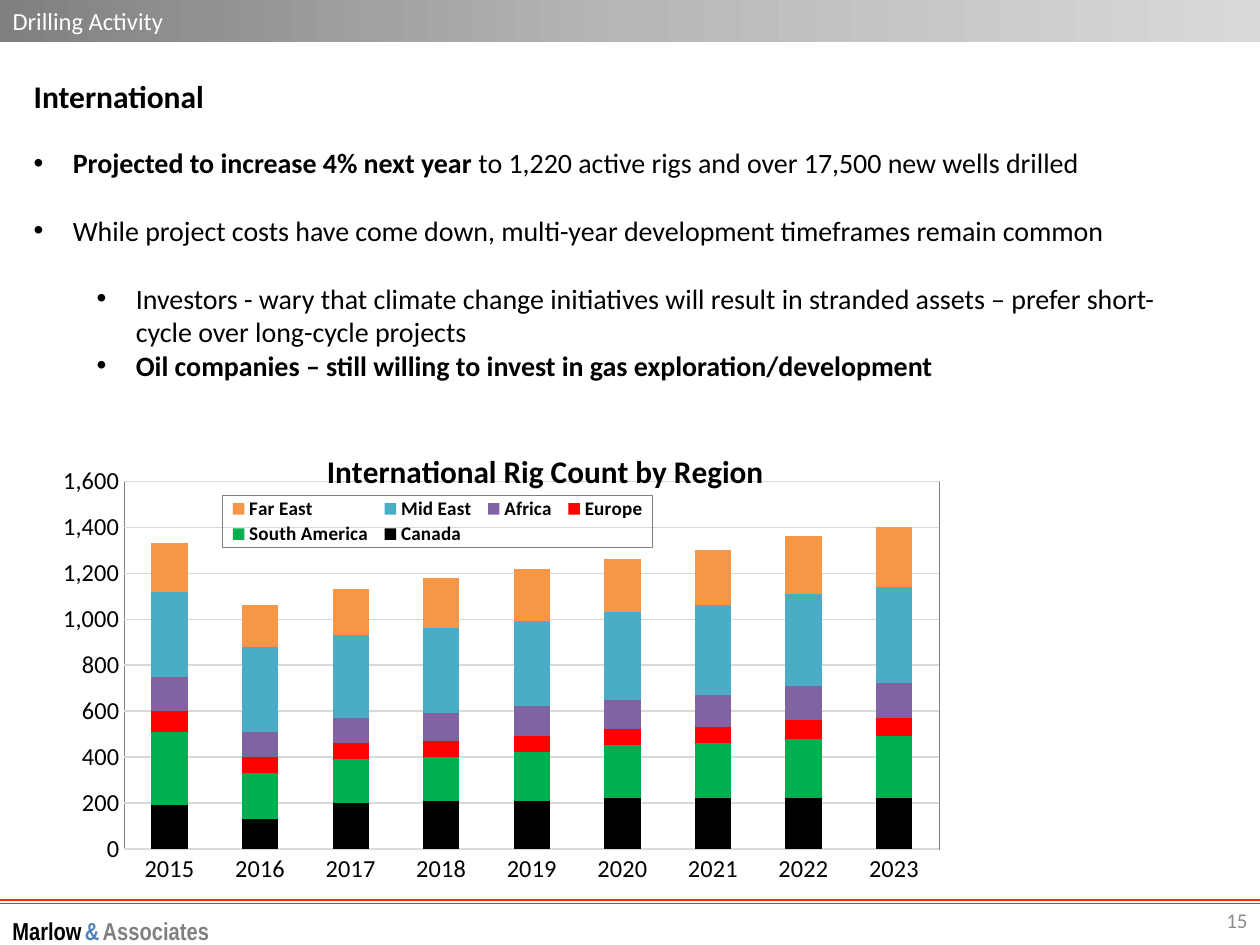
import copy
from dataclasses import dataclass

import pptx
import pptx.chart.data
import pptx.dml.color
import pptx.enum.chart
import pptx.enum.shapes
import pptx.enum.text
import pptx.oxml
import pptx.oxml.ns
import pptx.util

Cm = pptx.util.Cm
Pt = pptx.util.Pt
RGBColor = pptx.dml.color.RGBColor
Anchor = pptx.enum.text.MSO_ANCHOR
Align = pptx.enum.text.PP_ALIGN
qn = pptx.oxml.ns.qn

BLACK = RGBColor(0, 0, 0)
WHITE = RGBColor(255, 255, 255)
GRAY = RGBColor(0x80, 0x80, 0x80)
MID_GRAY = RGBColor(0xB7, 0xB7, 0xB7)
LIGHT_GRAY = RGBColor(0xD9, 0xD9, 0xD9)
NUMBER_GRAY = RGBColor(0x8C, 0x8C, 0x8C)
RULE_RED = RGBColor(0xFF, 0x33, 0x00)
BLUE = RGBColor(0x4F, 0x81, 0xBD)

POINTS = [
    (0, 18, [("Projected to increase 4% next year ", True),
             ("to 1,220 active rigs and over 17,500 new wells drilled", False)]),
    (0, 19.5, [("While project costs have come down, multi-year development "
                "timeframes remain common", False)]),
    (1, 19.5, [("Investors - wary that climate change initiatives will result in "
                "stranded assets – prefer short-cycle over long-cycle projects", False)]),
    (1, 0, [("Oil companies – still willing to invest in gas "
             "exploration/development", True)]),
]
YEARS = [str(year) for year in range(2015, 2024)]
REGIONS = [
    ("Canada", BLACK, [190, 130, 200, 210, 210, 220, 220, 220, 220]),
    ("South America", RGBColor(0x00, 0xB0, 0x50),
     [320, 200, 190, 190, 210, 230, 240, 260, 270]),
    ("Europe", RGBColor(0xFF, 0x00, 0x00), [90, 70, 70, 70, 70, 70, 70, 80, 80]),
    ("Africa", RGBColor(0x80, 0x64, 0xA2),
     [150, 110, 110, 120, 130, 130, 140, 150, 150]),
    ("Mid East", RGBColor(0x4B, 0xAC, 0xC6),
     [370, 370, 360, 370, 370, 380, 390, 400, 420]),
    ("Far East", RGBColor(0xF7, 0x96, 0x46),
     [210, 180, 200, 220, 230, 230, 240, 250, 260]),
]


@dataclass
class Box:
    left: float
    top: float
    width: float
    height: float

    def lengths(self):
        return Cm(self.left), Cm(self.top), Cm(self.width), Cm(self.height)


def style_font(font, size, color=BLACK, bold=False, name="Calibri"):
    font.size = Pt(size)
    font.name = name
    font.bold = bold
    font.color.rgb = color


def add_text_box(page, box, anchor=Anchor.TOP):
    frame = page.shapes.add_textbox(*box.lengths()).text_frame
    frame.word_wrap = True
    frame.vertical_anchor = anchor
    return frame


def build_banner(page, box):
    title = page.shapes.title
    title.left, title.top, title.width, title.height = box.lengths()
    title.fill.gradient()
    title.fill.gradient_angle = 0
    stops = title.fill.gradient_stops
    stops[0].color.rgb, stops[0].position = MID_GRAY, 0.5
    stops[1].color.rgb, stops[1].position = LIGHT_GRAY, 1
    first = title._element.spPr.find(".//" + qn("a:gs"))
    first.addprevious(copy.deepcopy(first))
    start = title.fill.gradient_stops[0]
    start.color.rgb, start.position = GRAY, 0
    frame = title.text_frame
    frame.auto_size = pptx.enum.text.MSO_AUTO_SIZE.NONE
    frame.vertical_anchor = Anchor.MIDDLE
    frame.text = "Drilling Activity"
    para = frame.paragraphs[0]
    para.alignment = Align.LEFT
    style_font(para.font, 14, WHITE)


def add_bullet(para, level):
    para.level = level
    properties = para._p.get_or_add_pPr()
    properties.set("marL", str(Cm(0.79 + 1.27 * level)))
    properties.set("indent", str(Cm(-0.79)))
    properties.append(properties.makeelement(qn("a:buFont"), {"typeface": "Arial"}))
    properties.append(properties.makeelement(qn("a:buChar"), {"char": "•"}))


def build_points(page, box):
    frame = add_text_box(page, box)
    heading = frame.paragraphs[0]
    heading.text = "International"
    style_font(heading.font, 18, bold=True)
    for level, gap, spans in POINTS:
        para = frame.add_paragraph()
        add_bullet(para, level)
        para.space_before = Pt(gap)
        style_font(para.font, 16, bold=spans[0][1])
        for text, bold in spans:
            span = para.add_run()
            span.text = text
            if bold != spans[0][1]:
                span.font.bold = bold


def place_part(part, index, target=None, **fractions):
    for old in part.findall(qn("c:layout")):
        part.remove(old)
    layout = part.makeelement(qn("c:layout"), {})
    manual = layout.makeelement(qn("c:manualLayout"), {})
    layout.append(manual)
    settings = {"layoutTarget": target} if target else {}
    settings.update(xMode="edge", yMode="edge", **fractions)
    for tag, value in settings.items():
        manual.append(manual.makeelement(qn("c:" + tag), {"val": str(value)}))
    part.insert(index, layout)


def outline():
    return pptx.oxml.parse_xml(
        f'<c:spPr {pptx.oxml.ns.nsdecls("c", "a")}><a:ln w="{Pt(0.75)}">'
        f'<a:solidFill><a:srgbClr val="{GRAY}"/></a:solidFill></a:ln></c:spPr>')


def build_chart(page, box):
    data = pptx.chart.data.CategoryChartData(number_format="#,##0")
    data.categories = YEARS
    for name, _, values in REGIONS:
        data.add_series(name, values)
    chart = page.shapes.add_chart(
        pptx.enum.chart.XL_CHART_TYPE.COLUMN_STACKED, *box.lengths(), data).chart
    style_font(chart.font, 10, bold=True)

    chart.has_title = True
    chart.chart_title.text_frame.text = "International Rig Count by Region"
    style_font(chart.chart_title.text_frame.paragraphs[0].font, 18, bold=True)
    place_part(chart.chart_title._element, 1, x=0.28, y=0.03)

    plot = chart.plots[0]
    plot.gap_width, plot.overlap, plot.vary_by_categories = 150, 100, False
    for series, (_, color, _) in zip(plot.series, REGIONS):
        series.format.fill.solid()
        series.format.fill.fore_color.rgb = color
    area = chart._chartSpace.chart.plotArea
    place_part(area, 0, "inner", x=0.06, y=0.11, w=0.91, h=0.78)
    area.append(outline())

    for axis in (chart.category_axis, chart.value_axis):
        axis.major_tick_mark = pptx.enum.chart.XL_TICK_MARK.NONE
        style_font(axis.tick_labels.font, 14)
    values_axis = chart.value_axis
    values_axis.minimum_scale, values_axis.maximum_scale = 0, 1600
    values_axis.major_unit = 200
    values_axis.tick_labels.number_format = "#,##0"
    values_axis.tick_labels.number_format_is_linked = False
    values_axis.format.line.fill.background()
    for part in (chart.category_axis, values_axis.major_gridlines):
        part.format.line.color.rgb = LIGHT_GRAY
        part.format.line.width = Pt(0.75)

    chart.has_legend = True
    legend = chart.legend
    legend.position = pptx.enum.chart.XL_LEGEND_POSITION.RIGHT
    legend.include_in_layout = False
    style_font(legend.font, 11, bold=True)
    place_part(legend._element, 1, x=0.17, y=0.14, w=0.48, h=0.11)
    legend._element.find(qn("c:txPr")).addprevious(outline())


def build_footer(page, box):
    for offset in (0, 0.08):
        height = Cm(box.top + offset)
        rule = page.shapes.add_connector(
            pptx.enum.shapes.MSO_CONNECTOR.STRAIGHT,
            Cm(box.left), height, Cm(box.left + box.width), height)
        rule.line.color.rgb = RULE_RED
        rule.line.width = Pt(0.75)
        shape_properties = rule._element.spPr
        shape_properties.append(
            shape_properties.makeelement(qn("a:effectLst"), {}))

    firm = add_text_box(page, Box(box.left, box.top + 0.28, 11, 0.69), Anchor.MIDDLE)
    para = firm.paragraphs[0]
    for text, size, color in (("Marlow", 14, BLACK), (" ", 8, BLACK), ("&", 14, BLUE),
                              (" ", 8, BLACK), ("Associates", 14, GRAY)):
        span = para.add_run()
        span.text = text
        style_font(span.font, size, color, size == 14, "Arial Narrow")

    number = add_text_box(
        page, Box(box.left + box.width - 5.92, box.top - 0.1, 5.92, 1.02), Anchor.MIDDLE)
    para = number.paragraphs[0]
    para.text = "15"
    para.alignment = Align.RIGHT
    style_font(para.font, 12, NUMBER_GRAY)


def main():
    deck = pptx.Presentation()
    deck.slide_width, deck.slide_height = Cm(25.4), Cm(19.05)
    page = deck.slides.add_slide(deck.slide_layouts.get_by_name("Title Only"))
    build_banner(page, Box(0, 0, 25.4, 0.84))
    build_points(page, Box(0.43, 1.42, 23.93, 6.45))
    build_chart(page, Box(1.27, 8.66, 18.21, 9.5))
    build_footer(page, Box(0, 18.14, 25.4, 0.91))
    deck.save("out.pptx")


if __name__ == "__main__":
    main()
